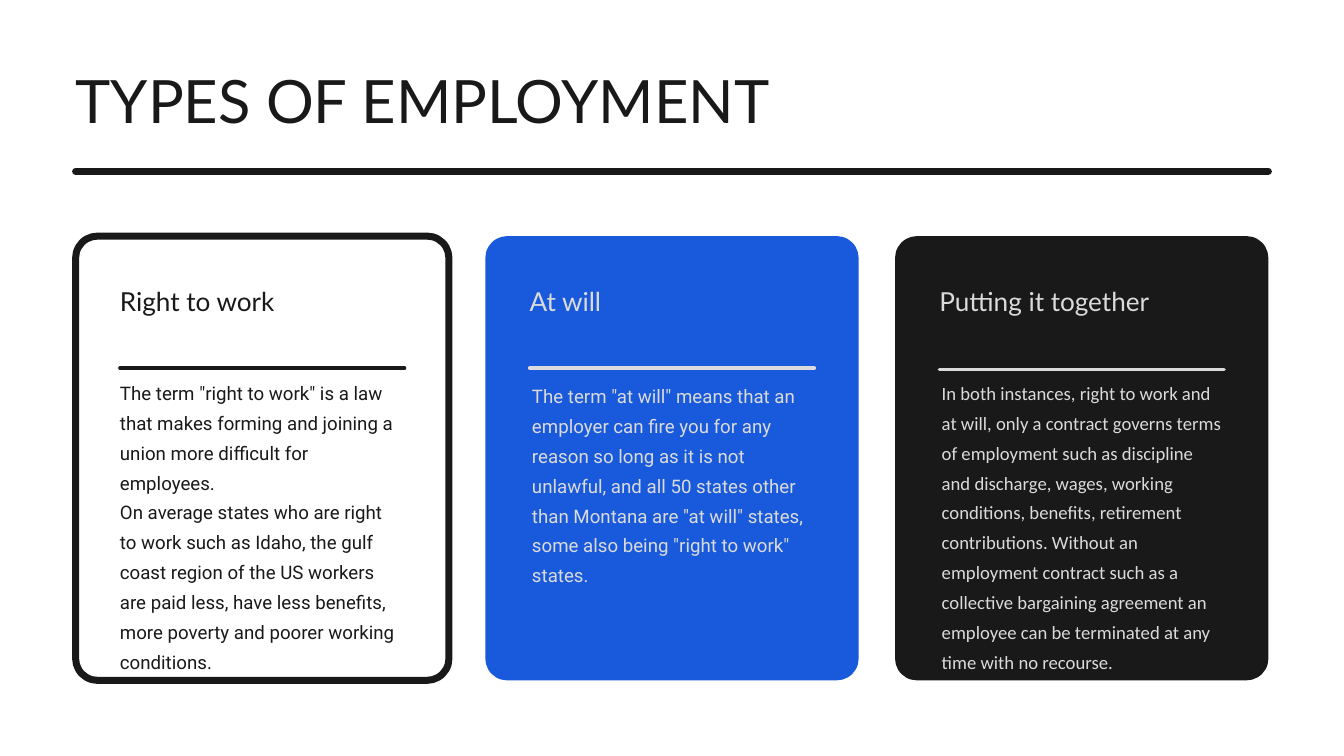
from lxml import etree
from pptx import Presentation
from pptx.dml.color import RGBColor
from pptx.enum import shapes, text
from pptx.oxml import ns
from pptx.util import Pt

BLACK = RGBColor(0x19, 0x19, 0x19)
BLUE = RGBColor(0x18, 0x5A, 0xDB)
GREY = RGBColor(0xDB, 0xDB, 0xDB)

TITLE = "TYPES OF EMPLOYMENT"
CARDS = [
    {
        "heading": "Right to work", "fill": None, "color": BLACK, "font": "Roboto",
        "rule_top": 394.5, "body_top": 401, "body_indent": 0, "body_height": 253,
        "body": [
            'The term "right to work" is a law that makes forming and joining a union '
            "more difficult for employees.",
            "On average states who are right to work such as Idaho, the gulf coast region "
            "of the US workers are paid less, have less benefits, more poverty and poorer "
            "working conditions.",
        ],
    },
    {
        "heading": "At will", "fill": BLUE, "color": GREY, "font": "Roboto",
        "rule_top": 394.5, "body_top": 404.5, "body_indent": 2.5, "body_height": 191,
        "body": [
            'The term "at will" means that an employer can fire you for any reason so long '
            "as it is not unlawful, and all 50 states other than Montana are \"at will\" "
            'states, some also being "right to work" states.',
        ],
    },
    {
        "heading": "Putting it together", "fill": BLACK, "color": GREY, "font": "Calibri",
        "rule_top": 396, "body_top": 401, "body_indent": 2.5, "body_height": 317,
        "body": [
            "In both instances, right to work and at will, only a contract governs terms of "
            "employment such as discipline and discharge, wages, working conditions, "
            "benefits, retirement contributions. Without an employment contract such as a "
            "collective bargaining agreement an employee can be terminated at any time with "
            "no recourse.",
        ],
    },
]

SLIDE_WIDTH, SLIDE_HEIGHT = 1440, 810
MARGIN = 81
CARD_TOP, CARD_WIDTH, CARD_HEIGHT, CARD_RADIUS = 253, 400, 476, 23.4
CARD_STEP = (SLIDE_WIDTH - 2 * MARGIN - CARD_WIDTH) / (len(CARDS) - 1)
PADDING = 47.5
INNER_WIDTH = CARD_WIDTH - 2 * PADDING


def add_rule(slide, left, top, width, color, weight):
    """Draw a horizontal line with round ends."""
    rule = slide.shapes.add_connector(
        shapes.MSO_CONNECTOR.STRAIGHT, Pt(left), Pt(top), Pt(left + width), Pt(top))
    rule.line.color.rgb = color
    rule.line.width = Pt(weight)
    rule.line._get_or_add_ln().set("cap", "rnd")
    etree.SubElement(rule._element.spPr, ns.qn("a:effectLst"))


def add_text(slide, left, top, width, height, paragraphs, font, size, color, spacing):
    box = slide.shapes.add_textbox(Pt(left), Pt(top), Pt(width), Pt(height))
    frame = box.text_frame
    frame.word_wrap = True
    frame.auto_size = text.MSO_AUTO_SIZE.NONE
    frame.margin_left = frame.margin_right = frame.margin_top = frame.margin_bottom = 0
    for index, content in enumerate(paragraphs):
        paragraph = frame.add_paragraph() if index else frame.paragraphs[0]
        paragraph.line_spacing = Pt(spacing)
        run = paragraph.add_run()
        run.text = content
        run.font.name = font
        run.font.size = Pt(size)
        run.font.color.rgb = color


def add_card(slide, left, card):
    panel = slide.shapes.add_shape(
        shapes.MSO_SHAPE.ROUNDED_RECTANGLE,
        Pt(left), Pt(CARD_TOP), Pt(CARD_WIDTH), Pt(CARD_HEIGHT))
    panel.adjustments[0] = CARD_RADIUS / CARD_WIDTH
    panel.shadow.inherit = False
    if card["fill"] is None:
        panel.fill.background()
        panel.line.color.rgb = card["color"]
        panel.line.width = Pt(7.5)
    else:
        panel.fill.solid()
        panel.fill.fore_color.rgb = card["fill"]
        panel.line.fill.background()

    inner_left = left + PADDING
    add_rule(slide, inner_left, card["rule_top"], INNER_WIDTH, card["color"], 3.75)
    add_text(slide, inner_left, 311, INNER_WIDTH, 33, [card["heading"]],
             "Lato", 28, card["color"], 28)
    add_text(slide, inner_left + card["body_indent"], card["body_top"], 303,
             card["body_height"], card["body"], card["font"], 20, card["color"], 32)


def main():
    presentation = Presentation()
    presentation.slide_width = Pt(SLIDE_WIDTH)
    presentation.slide_height = Pt(SLIDE_HEIGHT)
    slide = presentation.slides.add_slide(presentation.slide_layouts[6])

    add_text(slide, MARGIN, MARGIN, 1003, 76, [TITLE], "Lato", 64, BLACK, 64)
    add_rule(slide, MARGIN, 183.5, SLIDE_WIDTH - 2 * MARGIN, BLACK, 7.5)
    for index, card in enumerate(CARDS):
        add_card(slide, MARGIN + index * CARD_STEP, card)

    presentation.save("out.pptx")


if __name__ == "__main__":
    main()
